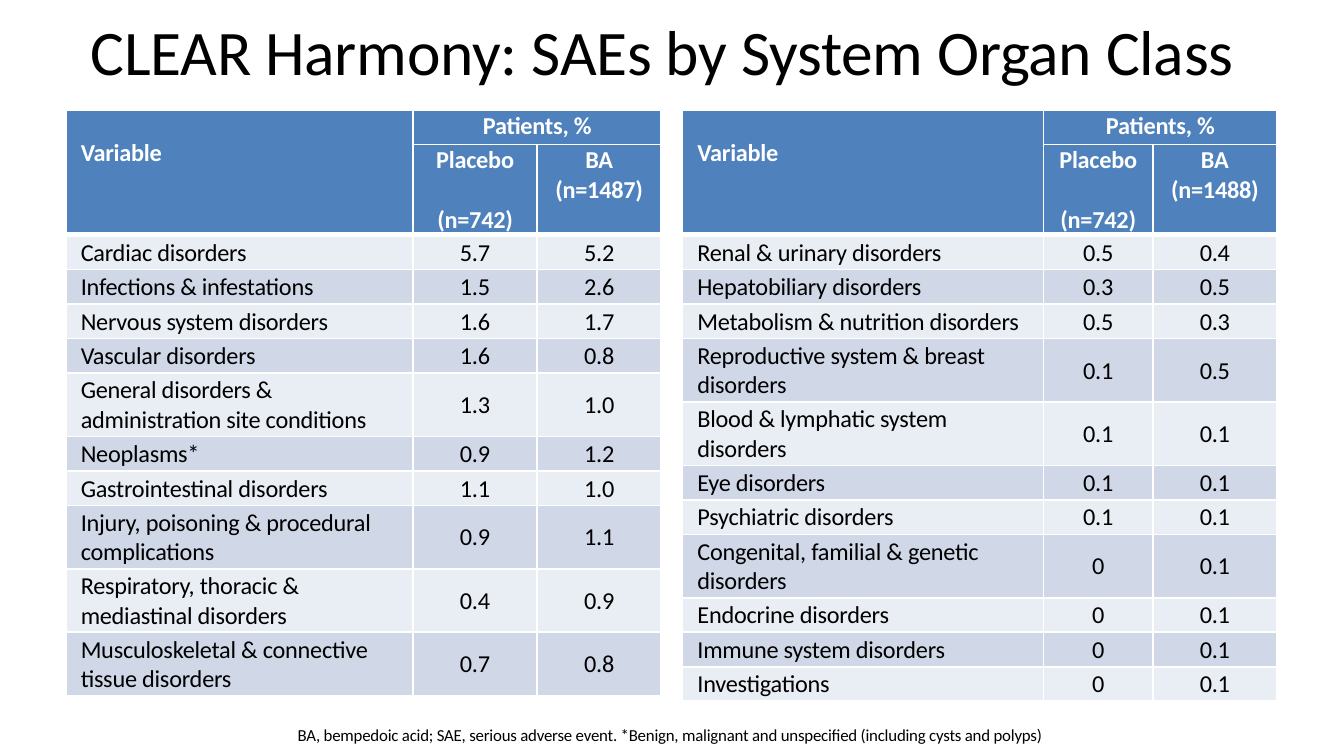
"""Build a slide with two side-by-side tables of serious adverse events."""
from lxml import etree
from pptx import Presentation
from pptx.dml.color import RGBColor
from pptx.enum import text as t
from pptx.oxml import ns
from pptx.util import Pt

TITLE = "CLEAR Harmony: SAEs by System Organ Class"
NOTE = ("BA, bempedoic acid; SAE, serious adverse event. *Benign, malignant "
        "and unspecified (including cysts and polyps)")
TABLES = [
    dict(left=35.3, cols=(186, 66.5, 66.5), count="(n=1487)", rows=[
        ("Cardiac disorders", "5.7", "5.2"),
        ("Infections & infestations", "1.5", "2.6"),
        ("Nervous system disorders", "1.6", "1.7"),
        ("Vascular disorders", "1.6", "0.8"),
        ("General disorders & administration site conditions", "1.3", "1.0"),
        ("Neoplasms*", "0.9", "1.2"),
        ("Gastrointestinal disorders", "1.1", "1.0"),
        ("Injury, poisoning & procedural complications", "0.9", "1.1"),
        ("Respiratory, thoracic & mediastinal disorders", "0.4", "0.9"),
        ("Musculoskeletal & connective tissue disorders", "0.7", "0.8"),
    ]),
    dict(left=365.6, cols=(193.5, 58.5, 66.5), count="(n=1488)", rows=[
        ("Renal & urinary disorders", "0.5", "0.4"),
        ("Hepatobiliary disorders", "0.3", "0.5"),
        ("Metabolism & nutrition disorders", "0.5", "0.3"),
        ("Reproductive system & breast disorders", "0.1", "0.5"),
        ("Blood & lymphatic system disorders", "0.1", "0.1"),
        ("Eye disorders", "0.1", "0.1"),
        ("Psychiatric disorders", "0.1", "0.1"),
        ("Congenital, familial & genetic disorders", "0", "0.1"),
        ("Endocrine disorders", "0", "0.1"),
        ("Immune system disorders", "0", "0.1"),
        ("Investigations", "0", "0.1"),
    ]),
]

BLACK = RGBColor(0, 0, 0)
WHITE = RGBColor(255, 255, 255)
BLUE = RGBColor(0x4F, 0x81, 0xBD)
BANDS = RGBColor(0xE9, 0xED, 0xF4), RGBColor(0xD0, 0xD8, 0xE8)
LEFT, MID = t.PP_ALIGN.LEFT, t.PP_ALIGN.CENTER
TOP, CORE = t.MSO_ANCHOR.TOP, t.MSO_ANCHOR.MIDDLE
TABLE_TOP, HEAD, ONE, TWO = 59, (18.5, 47), 18.5, 34
WIDEST = 32


def put(frame, words, size=13, color=BLACK, bold=False, align=LEFT, gap=0):
    frame.word_wrap = True
    for i, line in enumerate(words.split("\n")):
        para = frame.add_paragraph() if i else frame.paragraphs[0]
        para.alignment = align
        para.line_spacing = 1.0
        if i:
            para.space_before = Pt(gap)
        run = para.add_run()
        run.text = line
        font = run.font
        font.name, font.size, font.bold = "Calibri", Pt(size), bold
        font.color.rgb = color
        run._r.get_or_add_rPr().set("spc", "-10")


def inset(box, left=0, top=0, right=0):
    box.margin_left, box.margin_top = Pt(left), Pt(top)
    box.margin_right, box.margin_bottom = Pt(right), Pt(0)


def edge(cell, **widths):
    props = cell._tc.get_or_add_tcPr()
    for side in "LRTB":
        line = etree.SubElement(props, ns.qn(f"a:ln{side}"), w=str(Pt(widths.get(side, 1))))
        fill = etree.SubElement(line, ns.qn("a:solidFill"))
        etree.SubElement(fill, ns.qn("a:srgbClr"), val=str(WHITE))


def place(box, left, top, width, height):
    box.left, box.top, box.width, box.height = map(Pt, (left, top, width, height))
    inset(box.text_frame, top=1)
    box.text_frame.vertical_anchor = TOP


def draw(slide, left, cols, count, rows):
    highs = [*HEAD, *(TWO if len(row[0]) > WIDEST else ONE for row in rows)]
    shape = slide.shapes.add_table(len(highs), len(cols), Pt(left), Pt(TABLE_TOP),
                                   Pt(sum(cols)), Pt(sum(highs)))
    table = shape.table
    for col, width in zip(table.columns, cols):
        col.width = Pt(width)
    for row, high in zip(table.rows, highs):
        row.height = Pt(high)
    grid = [("Variable", "Patients, %", ""), ("", "Placebo\n(n=742)", f"BA\n{count}"), *rows]
    for r, row in enumerate(grid):
        head = r < len(HEAD)
        for c, words in enumerate(row):
            cell = table.cell(r, c)
            edge(cell, T=3 if r == 2 else 1, B=3 if r == 1 else 1)
            cell.fill.solid()
            cell.fill.fore_color.rgb = BLUE if head else BANDS[r % 2]
            top = 15 if words == "Variable" else 0.7
            inset(cell, *((0, top) if c else (8, top, 6)))
            cell.vertical_anchor = TOP if head else CORE
            if words:
                put(cell.text_frame, words, color=WHITE if head else BLACK, bold=head,
                    align=MID if c else LEFT, gap=16 if c == 1 else 0)
    table.cell(0, 0).merge(table.cell(1, 0))
    table.cell(0, 1).merge(table.cell(0, 2))


def main():
    deck = Presentation()
    deck.slide_width, deck.slide_height = Pt(720), Pt(405)
    slide = deck.slides.add_slide(deck.slide_layouts[5])
    title = slide.shapes.title
    place(title, 48.5, 5.5, 623, 42.5)
    put(title.text_frame, TITLE, size=34)
    for item in TABLES:
        draw(slide, **item)
    note = slide.shapes.add_textbox(0, 0, 0, 0)
    place(note, 159.5, 387.5, 413, 13)
    put(note.text_frame, NOTE, size=9)
    deck.save("out.pptx")


if __name__ == "__main__":
    main()
